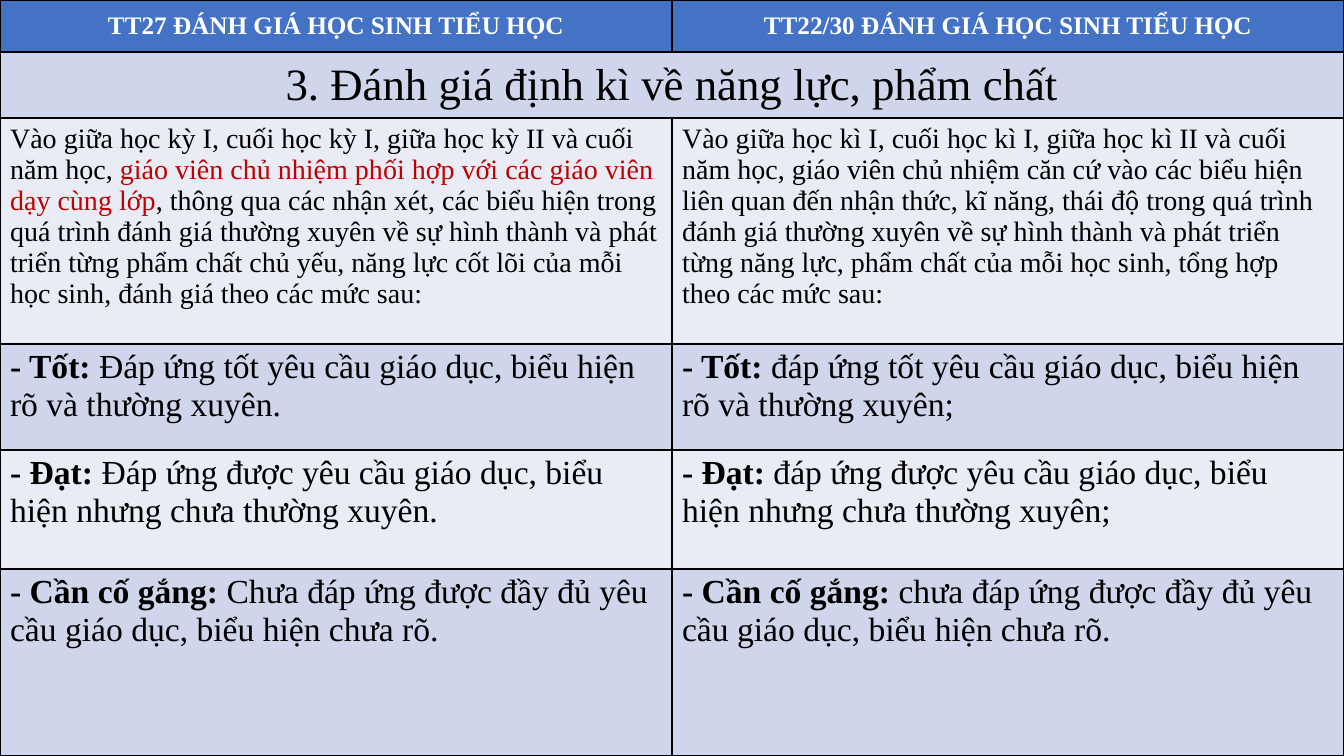
from dataclasses import dataclass
from lxml import etree
from pptx import Presentation, util as u
from pptx.dml.color import RGBColor
from pptx.enum import text
from pptx.oxml.ns import qn


@dataclass(frozen=True)
class Theme:
    font: str = "Times New Roman"
    head: str = "4472C4"
    dark: str = "CFD5EA"
    light: str = "E9EBF5"
    ink: str = "000000"
    white: str = "FFFFFF"
    red: str = "C00000"
    small: int = 18
    body: int = 20
    level: int = 24
    title: int = 32


class Deck:
    scale = 914400 / 100.8

    def __init__(self, theme, wide, high):
        self.theme = theme
        self.prs = Presentation()
        self.prs.slide_width, self.prs.slide_height = self.px(wide), self.px(high)
        self.slide = self.prs.slides.add_slide(self.prs.slide_layouts[6])

    def px(self, n):
        return u.Emu(round(n * self.scale))

    def table(self, cols, rows):
        frame = self.slide.shapes.add_table(
            len(rows), len(cols), 0, 0, self.px(sum(cols)), self.px(sum(rows)))
        grid = frame.table
        for col, wide in zip(grid.columns, cols):
            col.width = self.px(wide)
        for row, high in zip(grid.rows, rows):
            row.height = self.px(high)
        return grid

    def border(self, cell):
        """Draw a thin line on all four sides; call before the fill is set."""
        props = cell._tc.get_or_add_tcPr()
        for side in ("lnL", "lnR", "lnT", "lnB"):
            line = etree.SubElement(props, qn(f"a:{side}"), w=str(u.Pt(1)))
            fill = etree.SubElement(line, qn("a:solidFill"))
            etree.SubElement(fill, qn("a:srgbClr"), val=self.theme.ink)

    def cell(self, cell, fill, runs, size, mid=False):
        """Fill a cell with runs, each a text and its format values."""
        self.border(cell)
        cell.fill.solid()
        cell.fill.fore_color.rgb = RGBColor.from_string(fill)
        para = cell.text_frame.paragraphs[0]
        if mid:
            cell.vertical_anchor = text.MSO_ANCHOR.MIDDLE
            para.alignment = text.PP_ALIGN.CENTER
        for words, form in runs:
            run = para.add_run()
            run.text = words
            form = {"name": self.theme.font, "size": u.Pt(size), "bold": False,
                    "color": self.theme.ink} | form
            run.font.color.rgb = RGBColor.from_string(form.pop("color"))
            for key, value in form.items():
                setattr(run.font, key, value)


THEME = Theme()
BOLD = {"bold": True}
HEADS = ["TT27 ĐÁNH GIÁ HỌC SINH TIỂU HỌC", "TT22/30 ĐÁNH GIÁ HỌC SINH TIỂU HỌC"]
TITLE = "3. Đánh giá định kì về năng lực, phẩm chất"
INTROS = [
    [("Vào giữa học kỳ I, cuối học kỳ I, giữa học kỳ II và cuối năm học, ", {}),
     ("giáo viên chủ nhiệm phối hợp với các giáo viên dạy cùng lớp",
      {"color": THEME.red}),
     (", thông qua các nhận xét, các biểu hiện trong quá trình đánh giá thường "
      "xuyên về sự hình thành và phát triển từng phẩm chất chủ yếu, năng lực cốt "
      "lõi của mỗi học sinh, đánh giá theo các mức sau:", {})],
    [("Vào giữa học kì I, cuối học kì I, giữa học kì II và cuối năm học, giáo viên "
      "chủ nhiệm căn cứ vào các biểu hiện liên quan đến nhận thức, kĩ năng, thái độ "
      "trong quá trình đánh giá thường xuyên về sự hình thành và phát triển từng "
      "năng lực, phẩm chất của mỗi học sinh, tổng hợp theo các mức sau:", {})],
]
# Level name, shared wording after the first letter, and the two end marks
LEVELS = [
    ("Tốt", "áp ứng tốt yêu cầu giáo dục, biểu hiện rõ và thường xuyên",
     "Đđ", ".;"),
    ("Đạt", "áp ứng được yêu cầu giáo dục, biểu hiện nhưng chưa thường xuyên",
     "Đđ", ".;"),
    ("Cần cố gắng", "hưa đáp ứng được đầy đủ yêu cầu giáo dục, biểu hiện chưa rõ",
     "Cc", ".."),
]


def main():
    deck = Deck(THEME, 1344, 756)
    grid = deck.table([672, 672], [52, 66, 226, 106, 119, 187])
    grid.cell(1, 0).merge(grid.cell(1, 1))
    title = [(TITLE, {})]
    deck.cell(grid.cell(1, 0), THEME.dark, title, THEME.title, mid=True)
    deck.cell(grid.cell(1, 1), THEME.dark, [], THEME.title)
    for col, (head, intro) in enumerate(zip(HEADS, INTROS)):
        runs = [(head, BOLD | {"color": THEME.white})]
        deck.cell(grid.cell(0, col), THEME.head, runs, THEME.small, mid=True)
        deck.cell(grid.cell(2, col), THEME.light, intro, THEME.body)
        for row, (name, words, first, last) in enumerate(LEVELS, 3):
            fill = THEME.dark if row % 2 else THEME.light
            runs = [(f"- {name}: ", BOLD), (first[col] + words + last[col], {})]
            deck.cell(grid.cell(row, col), fill, runs, THEME.level)
    deck.prs.save("out.pptx")


if __name__ == "__main__":
    main()
